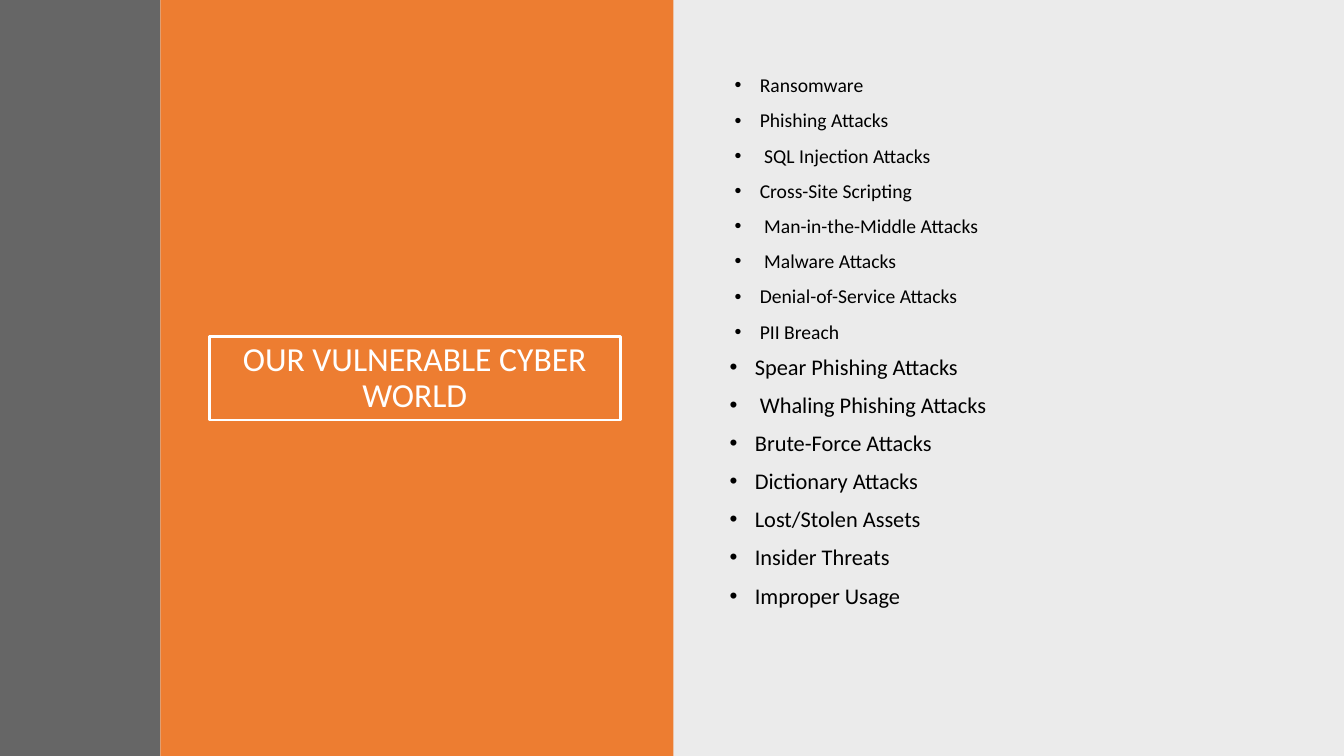
from lxml import etree
from pptx import Presentation
from pptx.dml.color import RGBColor
from pptx.enum.shapes import MSO_SHAPE
from pptx.enum.text import MSO_ANCHOR as ANCHOR, MSO_AUTO_SIZE as AUTO, PP_ALIGN as ALIGN
from pptx.oxml import parse_xml
from pptx.oxml.ns import nsdecls, qn
from pptx.util import Pt

WHITE = RGBColor(0xFF, 0xFF, 0xFF)
BLACK = RGBColor(0, 0, 0)
ORANGE = RGBColor(0xED, 0x7D, 0x31)
CHARCOAL = RGBColor(0x40, 0x40, 0x40)


def write(p, text, size, color, align=ALIGN.LEFT, before=0, indent=None):
    """Fill a paragraph; an indent makes it a bulleted item."""
    p.alignment, p.line_spacing = align, 0.9
    p.space_before, p.space_after = Pt(before), Pt(0)
    r = p.add_run()
    r.text = text
    r.font.name, r.font.size, r.font.color.rgb = "Calibri", Pt(size), color
    if indent is not None:
        pPr = p._p.get_or_add_pPr()
        pPr.set("marL", str(Pt(indent)))
        pPr.set("indent", str(Pt(-18)))
        for bullet in (f'<a:buClr {nsdecls("a")}><a:srgbClr val="{color}"/></a:buClr>',
                       f'<a:buFont {nsdecls("a")} typeface="Arial"/>',
                       f'<a:buChar {nsdecls("a")} char="•"/>'):
            pPr.append(parse_xml(bullet))


def place(sp, left, top, width, height, anchor):
    """Move a placeholder in front of the panels and set up its frame."""
    sp.left, sp.top, sp.width, sp.height = Pt(left), Pt(top), Pt(width), Pt(height)
    slide.shapes.element.append(sp.element)
    tf = sp.text_frame
    tf.word_wrap, tf.auto_size, tf.vertical_anchor = True, AUTO.NONE, anchor
    return tf


prs = Presentation()
prs.slide_width, prs.slide_height = Pt(960), Pt(540)
slide = prs.slides.add_slide(prs.slide_layouts[3])
title, attacks, threats = slide.placeholders

# Background panels: left, width, colour, opacity in percent
for left, width, color, opacity in [(480, 480, BLACK, 8),
                                    (114.5, 366.5, ORANGE, 100),
                                    (0, 114.5, CHARCOAL, 80)]:
    sp = slide.shapes.add_shape(MSO_SHAPE.RECTANGLE, Pt(left), 0, Pt(width), Pt(540))
    sp.shadow.inherit = False
    sp.line.fill.background()
    sp.fill.solid()
    sp.fill.fore_color.rgb = color
    if opacity < 100:
        clr = sp.element.spPr.find(qn("a:solidFill")).find(qn("a:srgbClr"))
        etree.SubElement(clr, qn("a:alpha")).set("val", str(opacity * 1000))

# Framed title
tf = place(title, 149.5, 240.5, 293.5, 59.5, ANCHOR.MIDDLE)
title.line.color.rgb, title.line.width = WHITE, Pt(2)
write(tf.paragraphs[0], "OUR VULNERABLE CYBER WORLD", 24, WHITE, align=ALIGN.CENTER)

# Two bulleted lists, one above the other
lists = [
    (attacks, 517.5, 50.5, 14, 18,
     ["Ransomware", "Phishing Attacks", " SQL Injection Attacks", "Cross-Site Scripting",
      " Man-in-the-Middle Attacks", " Malware Attacks", "Denial-of-Service Attacks",
      "PII Breach"]),
    (threats, 509.5, 250.5, 16, 22.5,
     ["Spear Phishing Attacks", " Whaling Phishing Attacks", "Brute-Force Attacks",
      "Dictionary Attacks", "Lost/Stolen Assets", "Insider Threats", "Improper Usage"]),
]
for sp, left, top, size, indent, items in lists:
    tf = place(sp, left, top, 398, 201, ANCHOR.TOP)
    for i, item in enumerate(items):
        p = tf.add_paragraph() if i else tf.paragraphs[0]
        write(p, item, size, BLACK, before=10 if i else 0, indent=indent)

prs.save("out.pptx")
